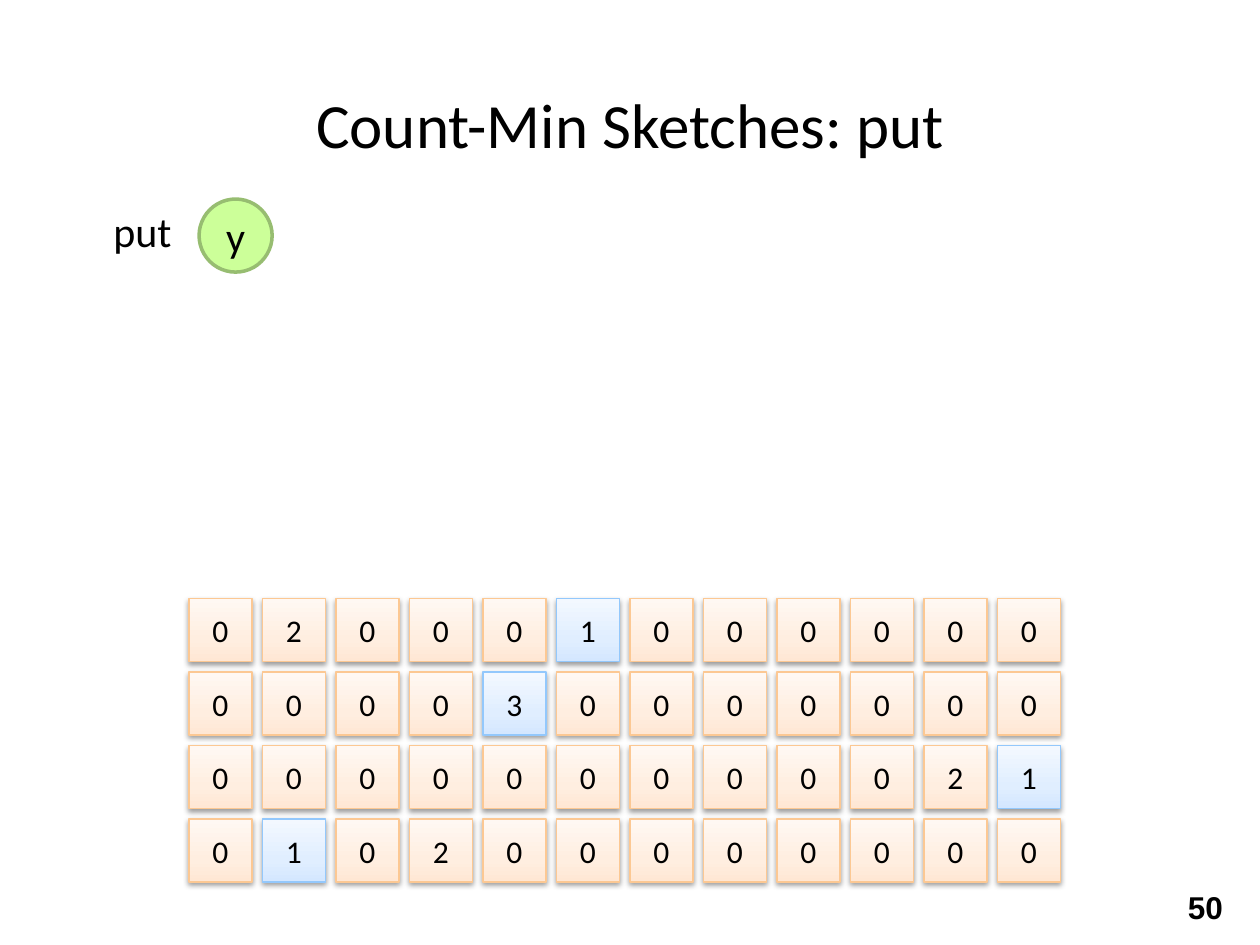
"""Build a slide showing a count-min sketch as a key is put into it."""
import copy
import dataclasses
import typing

import lxml.etree
import pptx
import pptx.dml.color
import pptx.enum.shapes
import pptx.enum.text
import pptx.oxml.ns
import pptx.shapes.autoshape
import pptx.slide
import pptx.util

Inches = pptx.util.Inches
Align = pptx.enum.text.PP_ALIGN
Anchor = pptx.enum.text.MSO_ANCHOR
ShapeKind = pptx.enum.shapes.MSO_SHAPE
qualified = pptx.oxml.ns.qn


class CellStyle(typing.NamedTuple):
    line: str
    stops: tuple[tuple[float, str], ...]


@dataclasses.dataclass(frozen=True)
class Theme:
    ink: str = "000000"
    key_fill: str = "CCFF99"
    key_line: str = "97BD71"
    font: str = "Calibri"
    number_font: str = "Arial"
    title_size: int = 36
    label_size: int = 24
    cell_size: int = 18
    plain: CellStyle = CellStyle("FCC893", ((0, "FFE7D4"), (0.35, "FFEEE0"), (1, "FFF8F3")))
    marked: CellStyle = CellStyle("93C8FC", ((0, "D4E7FF"), (0.35, "E0EEFF"), (1, "F3F8FF")))


@dataclasses.dataclass(frozen=True)
class Label:
    text: str
    box: tuple[float, float, float, float]
    size: int
    align: Align = Align.CENTER
    anchor: Anchor = Anchor.TOP
    font: str = "Calibri"
    bold: bool = False


class CounterRow(typing.NamedTuple):
    counts: str
    marked_column: int


THEME = Theme()
LABELS = (
    Label("put", (0.67, 1.58, 0.92, 0.5), THEME.label_size),
    Label("Count-Min Sketches: put", (0, 0.6, 10, 0.75), THEME.title_size, anchor=Anchor.MIDDLE),
    Label("50", (9.33, 7, 0.58, 0.4), THEME.cell_size, Align.LEFT,
          font=THEME.number_font, bold=True),
)
KEY = Label("y", (1.58, 1.58, 0.58, 0.58), THEME.label_size, anchor=Anchor.MIDDLE)
ROWS = (
    CounterRow("020001000000", 5),
    CounterRow("000030000000", 4),
    CounterRow("000000000021", 11),
    CounterRow("010200000000", 1),
)
GRID_LEFT, GRID_TOP, CELL_SIDE = 1.5, 4.75, 0.5
PITCH = 7 / 12


def rgb(value: str) -> pptx.dml.color.RGBColor:
    return pptx.dml.color.RGBColor.from_string(value)


def write_text(shape: pptx.shapes.autoshape.Shape, label: Label) -> None:
    frame = shape.text_frame
    frame.word_wrap = True
    frame.vertical_anchor = label.anchor
    paragraph = frame.paragraphs[0]
    paragraph.alignment = label.align
    run = paragraph.add_run()
    run.text = label.text
    font_values = {"name": label.font, "size": pptx.util.Pt(label.size), "bold": label.bold}
    for name, value in font_values.items():
        setattr(run.font, name, value)
    run.font.color.rgb = rgb(THEME.ink)


def add_label(slide: pptx.slide.Slide, label: Label) -> None:
    write_text(slide.shapes.add_textbox(*map(Inches, label.box)), label)


def add_outlined(slide: pptx.slide.Slide, kind: ShapeKind, label: Label,
                 line: str, width: float) -> pptx.shapes.autoshape.Shape:
    shape = slide.shapes.add_shape(kind, *map(Inches, label.box))
    shape.shadow.inherit = False
    shape.line.color.rgb = rgb(line)
    shape.line.width = pptx.util.Pt(width)
    write_text(shape, label)
    return shape


def fill_gradient(shape: pptx.shapes.autoshape.Shape, style: CellStyle) -> None:
    shape.fill.gradient()
    shape.fill.gradient_angle = 90
    stop_list = next(shape._element.spPr.iter(qualified("a:gsLst")))
    stop_list.append(copy.deepcopy(stop_list[-1]))
    for stop, (position, color) in zip(shape.fill.gradient_stops, style.stops):
        stop.position = position
        stop.color.rgb = rgb(color)


def add_shadow(shape: pptx.shapes.autoshape.Shape) -> None:
    effects = shape._element.spPr.find(qualified("a:effectLst"))
    shadow = lxml.etree.SubElement(effects, qualified("a:outerShdw"))
    shadow_values = {"blurRad": "40000", "dist": "20000", "dir": "5400000", "rotWithShape": "0"}
    for name, value in shadow_values.items():
        shadow.set(name, value)
    color = lxml.etree.SubElement(shadow, qualified("a:srgbClr"), val=THEME.ink)
    lxml.etree.SubElement(color, qualified("a:alpha"), val="38000")


def add_counter(slide: pptx.slide.Slide, count: str, row: int, column: int,
                style: CellStyle) -> None:
    box = (GRID_LEFT + column * PITCH, GRID_TOP + row * PITCH, CELL_SIDE, CELL_SIDE)
    label = Label(count, box, THEME.cell_size, anchor=Anchor.MIDDLE)
    cell = add_outlined(slide, ShapeKind.RECTANGLE, label, style.line, 0.75)
    fill_gradient(cell, style)
    add_shadow(cell)


def main() -> None:
    presentation = pptx.Presentation()
    presentation.slide_width = Inches(10)
    presentation.slide_height = Inches(7.5)
    slide = presentation.slides.add_slide(presentation.slide_layouts[6])
    for row, counters in enumerate(ROWS):
        for column, count in enumerate(counters.counts):
            style = THEME.marked if column == counters.marked_column else THEME.plain
            add_counter(slide, count, row, column, style)
    key = add_outlined(slide, ShapeKind.OVAL, KEY, THEME.key_line, 2)
    key.fill.solid()
    key.fill.fore_color.rgb = rgb(THEME.key_fill)
    for label in LABELS:
        add_label(slide, label)
    presentation.save("out.pptx")


if __name__ == "__main__":
    main()
